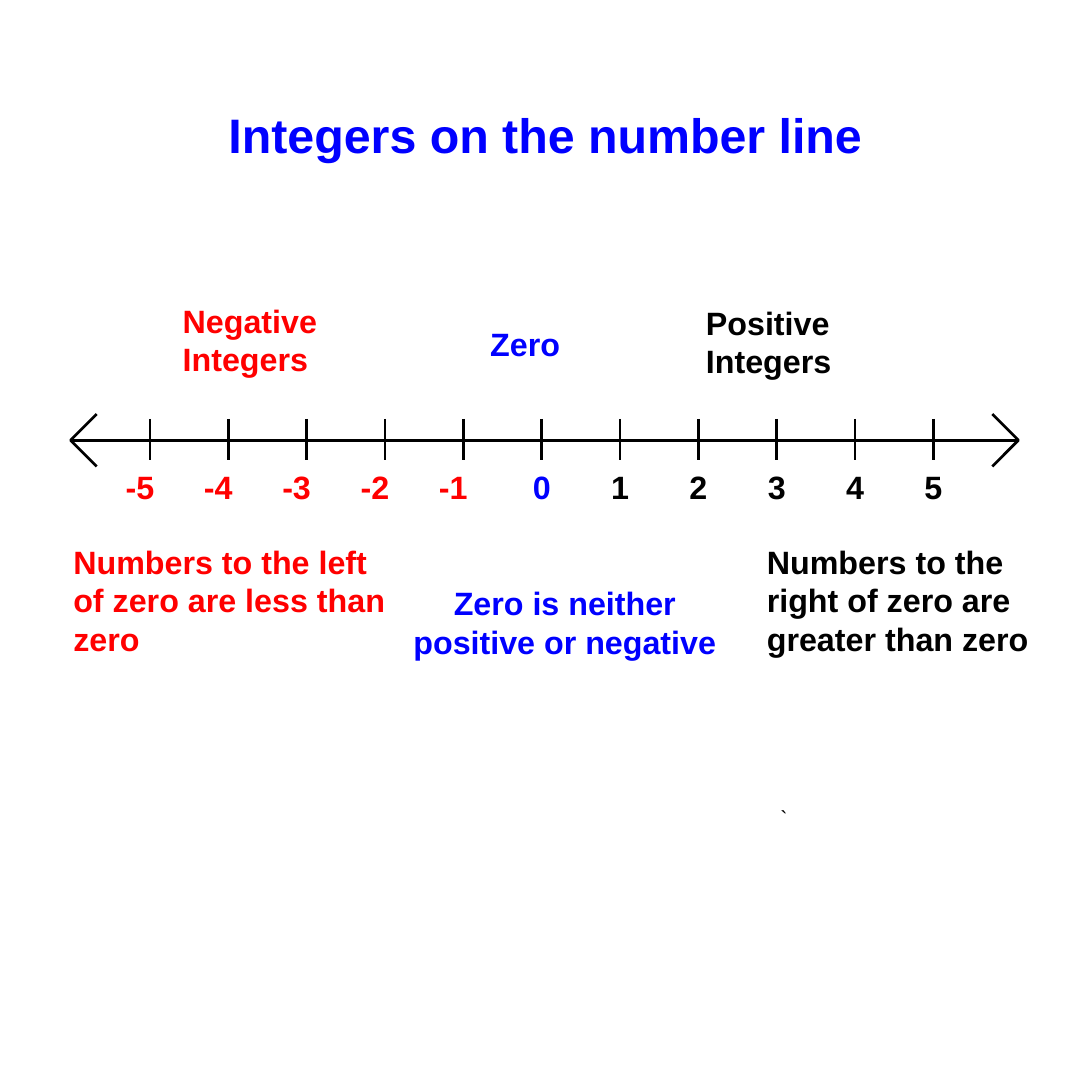
from dataclasses import dataclass

from lxml.etree import SubElement
from pptx import Presentation
from pptx.dml.color import RGBColor
from pptx.enum.shapes import MSO_CONNECTOR
from pptx.enum.text import MSO_ANCHOR, MSO_AUTO_SIZE, PP_ALIGN
from pptx.oxml.ns import qn
from pptx.util import Inches, Pt


@dataclass(frozen=True)
class Theme:
    font: str = "Arial"
    red: RGBColor = RGBColor(0xFF, 0, 0)
    blue: RGBColor = RGBColor(0, 0, 0xFF)
    black: RGBColor = RGBColor(0, 0, 0)
    title_size: int = 36
    text_size: int = 24
    mark_size: int = 16
    line_width: float = 2


THEME = Theme()
TITLE_BOX = (0.64, 1.04, 10, 0.71)
NUMBER_LINE_BOX = (0.73, 4.28, 9.8, 1.01)
CAPTIONS = [
    (("Negative", "Integers"), (1.79, 3.06, 2.09, 0.91), THEME.red, PP_ALIGN.LEFT),
    (("Zero",), (4.97, 3.3, 1.3, 0.5), THEME.blue, PP_ALIGN.LEFT),
    (("Positive", "Integers"), (7.2, 3.08, 1.95, 0.91), THEME.black, PP_ALIGN.LEFT),
    (("Numbers to the left of zero are less than zero",),
     (0.66, 5.55, 3.5, 1.31), THEME.red, PP_ALIGN.LEFT),
    (("Zero is neither", "positive or negative"),
     (4.14, 5.98, 3.4, 0.91), THEME.blue, PP_ALIGN.CENTER),
    (("Numbers to the right of zero are greater than zero",),
     (7.83, 5.55, 3.11, 1.31), THEME.black, PP_ALIGN.LEFT),
]


def set_attributes(target, values):
    for name, value in values.items():
        setattr(target, name, value)


def write_text(shape, lines, color, size=THEME.text_size, bold=True, alignment=PP_ALIGN.LEFT):
    frame = shape.text_frame
    frame.text = "\n".join(lines)
    set_attributes(frame, {"word_wrap": True, "auto_size": MSO_AUTO_SIZE.NONE,
                           "vertical_anchor": MSO_ANCHOR.TOP})
    for paragraph in frame.paragraphs:
        paragraph.alignment = alignment
        font = paragraph.runs[0].font
        set_attributes(font, {"name": THEME.font, "size": Pt(size), "bold": bold})
        font.color.rgb = color


def add_text(slide, box, lines, color, **text_format):
    shape = slide.shapes.add_textbox(*map(Inches, box))
    write_text(shape, lines, color, **text_format)


def style_line(shape):
    shape.line.color.rgb = THEME.black
    shape.line.width = Pt(THEME.line_width)


def add_line(slide, *ends):
    """Draw a straight line; ends are x1, y1, x2, y2 in inches."""
    line = slide.shapes.add_connector(MSO_CONNECTOR.STRAIGHT, *map(Inches, ends))
    style_line(line)
    SubElement(line._element.spPr, qn("a:effectLst"))


def add_arrowhead(slide, tip, middle, reach):
    """Draw an open arrowhead; the sign of reach says which way it opens."""
    half_height = abs(reach)
    builder = slide.shapes.build_freeform(
        Inches(tip + reach), Inches(middle - half_height))
    builder.add_line_segments(
        [(Inches(tip), Inches(middle)),
         (Inches(tip + reach), Inches(middle + half_height))], close=False)
    arrowhead = builder.convert_to_shape()
    arrowhead.fill.background()
    arrowhead.shadow.inherit = False
    style_line(arrowhead)


def add_number_line(slide, box, limit=5):
    left, top, width, height = box
    right, middle = left + width, top + 0.27
    add_line(slide, left, middle, right, middle)
    add_arrowhead(slide, left, middle, 0.27)
    add_arrowhead(slide, right, middle, -0.27)

    zero, pitch = left + 4.87, 0.81
    label_height = 0.5
    for number in range(-limit, limit + 1):
        x = zero + number * pitch
        add_line(slide, x, top + 0.05, x, top + 0.47)
        if number < 0:
            color, offset, label_width = THEME.red, 0.35, 0.59
        else:
            color = THEME.black if number else THEME.blue
            offset, label_width = 0.19, 0.42
        label_box = (x - offset, top + height - label_height - 0.01, label_width, label_height)
        add_text(slide, label_box, [str(number)], color)


def add_title(slide, box, text):
    title = slide.shapes.title
    sides = map(Inches, box)
    set_attributes(title, dict(zip(("left", "top", "width", "height"), sides)))
    write_text(title, [text], THEME.blue, size=THEME.title_size, alignment=PP_ALIGN.CENTER)


def main():
    presentation = Presentation()
    set_attributes(presentation, {"slide_width": Inches(11.29), "slide_height": Inches(11.11)})
    title_only = presentation.slide_layouts[5]
    slide = presentation.slides.add_slide(title_only)

    add_title(slide, TITLE_BOX, "Integers on the number line")
    add_number_line(slide, NUMBER_LINE_BOX)
    for lines, box, color, alignment in CAPTIONS:
        add_text(slide, box, lines, color, alignment=alignment)
    add_text(slide, (7.97, 8.27, 0.67, 0.37), ["`"], THEME.black,
             size=THEME.mark_size, bold=False)
    presentation.save("out.pptx")


if __name__ == "__main__":
    main()
